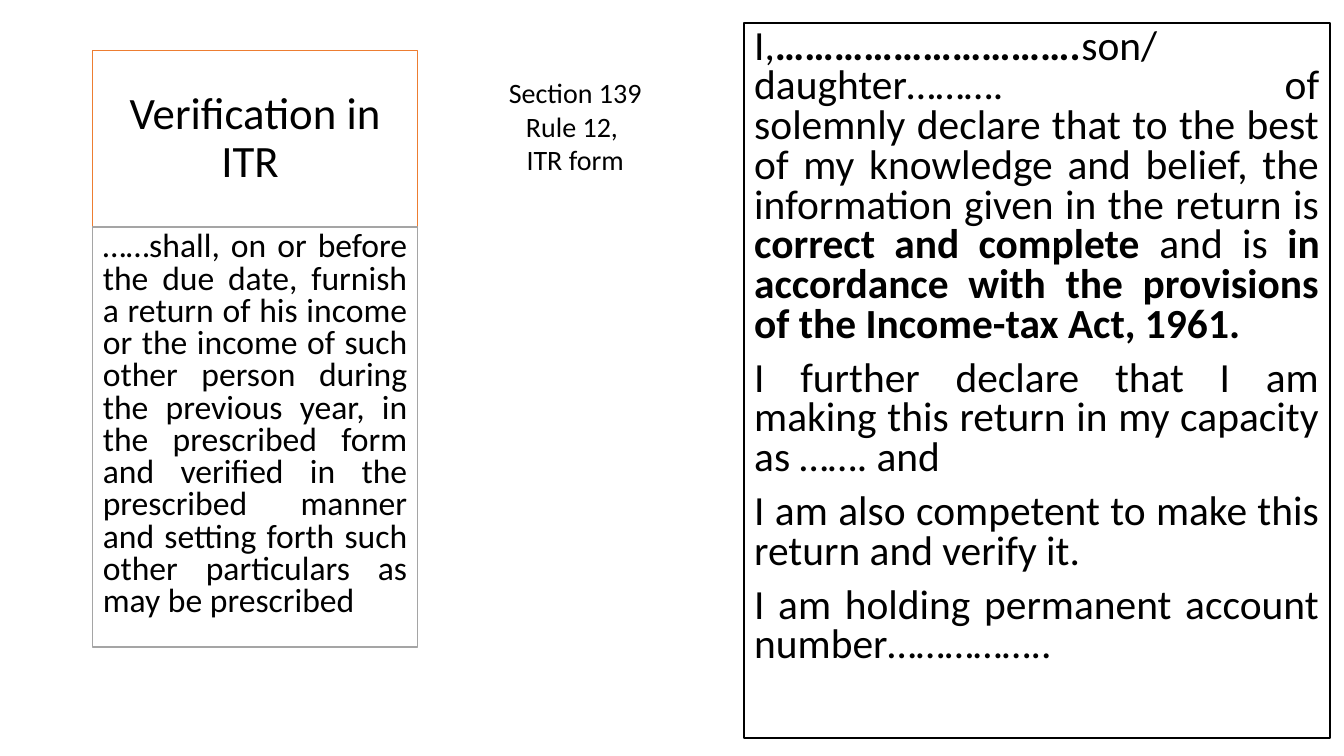
from dataclasses import dataclass
from lxml import etree
from pptx import Presentation
from pptx import util as u
from pptx.dml.color import RGBColor
from pptx.enum import text as t
from pptx.oxml import ns


@dataclass(frozen=True)
class Theme:
    font: str = "Calibri"
    ink: str = "000000"
    paper: str = "FFFFFF"
    accent: str = "ED7D31"
    grey: str = "A5A5A5"
    head: float = 32
    oath: float = 29.6
    rule: float = 24
    note: float = 20


THEME = Theme()
WIDE, HIGH = 13.33, 7.5

RULE = [[("……shall, on or before the due date, furnish a return of his income "
          "or the income of such other person during the previous year, in the "
          "prescribed form and verified in the prescribed manner and setting "
          "forth such other particulars as may be prescribed", False)]]
OATH = [
    [("I,", False), ("………………………….", True),
     ("son/daughter………. of\vsolemnly declare that to the best of my knowledge "
      "and belief, the information given in the return is ", False),
     ("correct and complete", True), (" and is ", False),
     ("in accordance with the provisions of the Income-tax Act, 1961.", True)],
    [("I further declare that I am making this return in my capacity as ……. and",
      False)],
    [("I am also competent to make this return and verify it.", False)],
    [("I am holding permanent account number……………..", False)],
]
NOTE = [[(line, False)] for line in ("Section 139", "Rule 12, ", "ITR form")]


def place(shape, box):
    shape.left, shape.top, shape.width, shape.height = map(u.Inches, box)


def frame(shape, box, edge):
    place(shape, box)
    shape.fill.solid()
    shape.fill.fore_color.rgb = RGBColor.from_string(THEME.paper)
    shape.line.color.rgb = RGBColor.from_string(edge)
    shape.line.width = u.Pt(1)


def write(shape, paras, size, align="CENTER", lead=1.0, gap=0, anchor="TOP"):
    body = shape.text_frame
    body.word_wrap = True
    body.auto_size = t.MSO_AUTO_SIZE.NONE
    body.vertical_anchor = t.MSO_ANCHOR[anchor]
    for i, parts in enumerate(paras):
        para = body.add_paragraph() if i else body.paragraphs[0]
        para.alignment = t.PP_ALIGN[align]
        para.line_spacing = lead
        para.space_before = u.Pt(gap)
        props = para._p.get_or_add_pPr()
        props.set("marL", "0")
        props.set("indent", "0")
        etree.SubElement(props, ns.qn("a:buNone"))
        for j, (words, bold) in enumerate(parts):
            for k, line in enumerate(words.split("\v")):
                if k:
                    para.add_line_break()
                run = para.add_run()
                run.text = line
                run.font.name = THEME.font
                run.font.size = u.Pt(size)
                run.font.bold = bold
                run.font.color.rgb = RGBColor.from_string(THEME.ink)


def law(slide, box):
    x, y, w, h = box
    top = 0.296 * h
    head, rule = slide.shapes.title, slide.placeholders[2]
    frame(head, (x, y, w, top), THEME.accent)
    write(head, [[("Verification in ITR ", False)]], THEME.head,
          lead=0.9, anchor="MIDDLE")
    frame(rule, (x, y + top, w, h - top), THEME.grey)
    write(rule, RULE, THEME.rule, align="JUSTIFY", lead=0.8, gap=10)


def oath(slide, box):
    shape = slide.placeholders[1]
    frame(shape, box, THEME.ink)
    write(shape, OATH, THEME.oath, align="JUSTIFY", lead=0.8, gap=10)


def note(slide, box):
    shape = slide.shapes.add_textbox(*map(u.Inches, box))
    write(shape, NOTE, THEME.note)


def share(x, y, w, h):
    return x * WIDE, y * HIGH, w * WIDE, h * HIGH


def main():
    deck = Presentation()
    deck.slide_width, deck.slide_height = u.Inches(WIDE), u.Inches(HIGH)
    slide = deck.slides.add_slide(deck.slide_layouts[7])
    law(slide, (0.92, 0.5, 3.22, 5.92))
    oath(slide, (7.38, 0.23, 5.81, 7.09))
    note(slide, (4.61, 0.7, 2.19, 1.11))
    deck.save("out.pptx")


if __name__ == "__main__":
    main()
